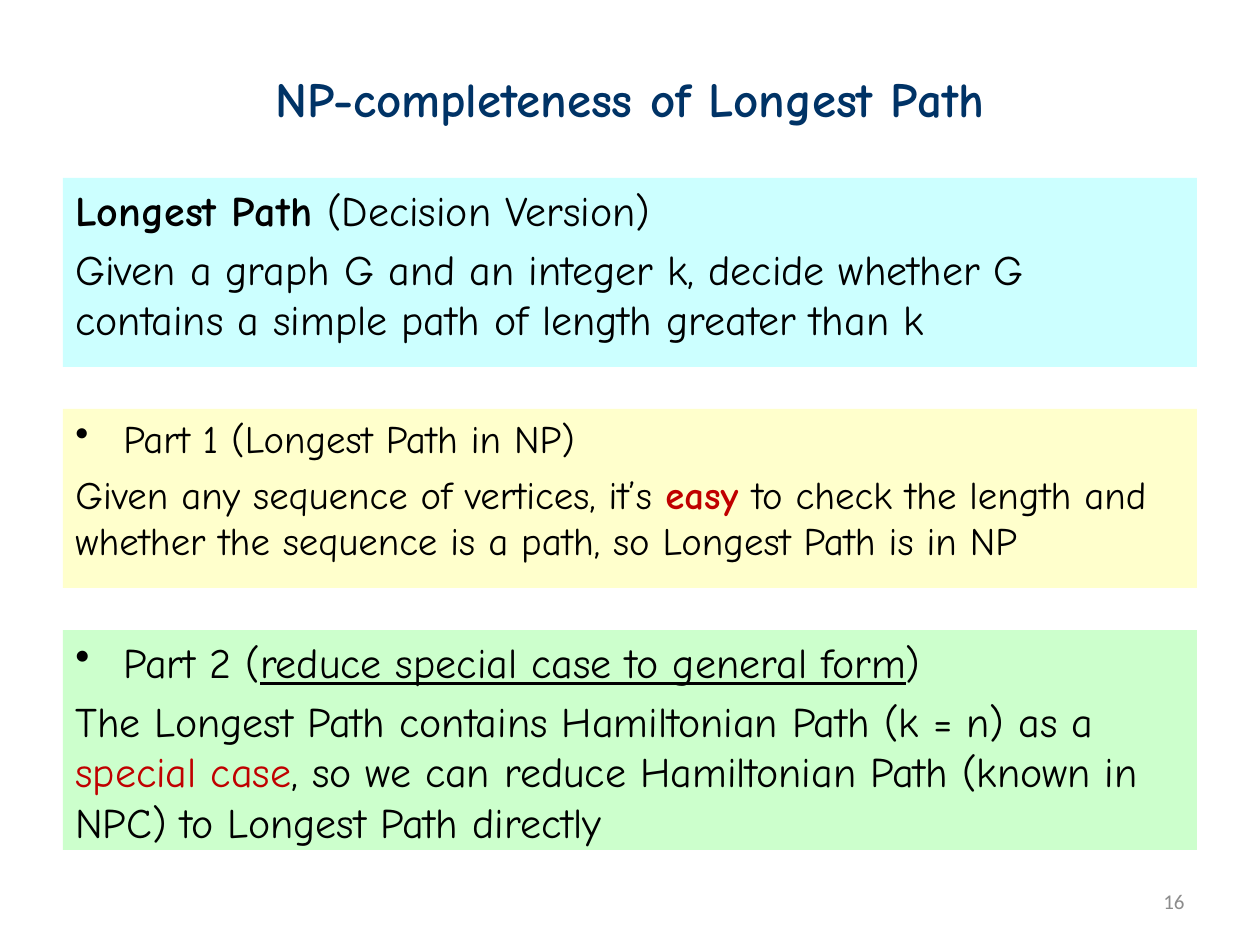
import pptx
import pptx.util
import pptx.dml.color
import pptx.enum.shapes
import pptx.enum.text
import pptx.oxml
import pptx.oxml.ns

FONT = "Comic Neue"
NAVY, BLACK, RED, GRAY = "003366", "000000", "C00000", "8C8C8C"
LEFT, WIDTH, INDENT = 63, 1134, 48

TITLE = "NP-completeness of Longest Path"
PAGE_NUMBER = "16"
PANELS = [
    dict(top=178, height=189, fill="CCFFFF", size=24, paragraphs=[
        (False, [("Longest Path ", dict(bold=True)), ("(Decision Version)", {})]),
        (False, [("Given a graph G and an integer k, decide whether G contains "
                  "a simple path of length greater than k", {})]),
    ]),
    dict(top=409, height=179, fill="FFFFCC", size=22.2, paragraphs=[
        (True, [("Part 1 (Longest Path in NP)", {})]),
        (False, [("Given any sequence of vertices, it’s ", {}),
                 ("easy ", dict(color=RED, bold=True)),
                 ("to check the length and whether the sequence is a path, "
                  "so Longest Path is in NP", {})]),
    ]),
    dict(top=630, height=220, fill="CCFFCC", size=24, paragraphs=[
        (True, [("Part 2 (", {}),
                ("reduce special case to general form", dict(underline=True)),
                (")", {})]),
        (False, [("The Longest Path contains Hamiltonian Path (k = n) as a ", {}),
                 ("special case", dict(color=RED)),
                 (", so we can reduce Hamiltonian Path (known in NPC) "
                  "to Longest Path directly", {})]),
    ]),
]


def px(n):
    return pptx.util.Emu(round(n * 914400 / 126))


def rgb(value):
    return pptx.dml.color.RGBColor.from_string(value)


def add_run(p, text, size=24, color=BLACK, bold=False, underline=False, font=FONT):
    r = p.add_run()
    r.text = text
    r.font.name = font
    r.font.size = pptx.util.Pt(size)
    r.font.bold = bold
    r.font.underline = underline
    r.font.color.rgb = rgb(color)


def add_bullet(p):
    pPr = p._p.get_or_add_pPr()
    pPr.set("marL", str(px(INDENT)))
    pPr.set("indent", str(-px(INDENT)))
    pPr.append(pptx.oxml.parse_xml(
        f'<a:buChar {pptx.oxml.ns.nsdecls("a")} char="•"/>'))


def add_line(s, box, text, align, **style):
    tf = s.shapes.add_textbox(*map(px, box)).text_frame
    tf.word_wrap = True
    tf.vertical_anchor = pptx.enum.text.MSO_ANCHOR.MIDDLE
    p = tf.paragraphs[0]
    p.alignment = align
    add_run(p, text, **style)


def add_panel(s, top, height, fill, size, paragraphs):
    sp = s.shapes.add_shape(pptx.enum.shapes.MSO_SHAPE.RECTANGLE,
                            px(LEFT), px(top), px(WIDTH), px(height))
    sp.shadow.inherit = False
    sp.fill.solid()
    sp.fill.fore_color.rgb = rgb(fill)
    sp.line.fill.background()
    tf = sp.text_frame
    tf.word_wrap = True
    tf.vertical_anchor = pptx.enum.text.MSO_ANCHOR.TOP
    for i, (bulleted, runs) in enumerate(paragraphs):
        p = tf.add_paragraph() if i else tf.paragraphs[0]
        p.alignment = pptx.enum.text.PP_ALIGN.LEFT
        p.space_before = pptx.util.Pt(5)
        if bulleted:
            add_bullet(p)
        for text, style in runs:
            add_run(p, text, size=size, **style)


def main():
    prs = pptx.Presentation()
    prs.slide_width, prs.slide_height = px(1260), px(945)
    s = prs.slides.add_slide(prs.slide_layouts[6])
    add_line(s, (LEFT, 38, WIDTH, 120), TITLE, pptx.enum.text.PP_ALIGN.CENTER,
             size=28, color=NAVY, bold=True)
    for panel in PANELS:
        add_panel(s, **panel)
    add_line(s, (903, 876, 294, 50), PAGE_NUMBER, pptx.enum.text.PP_ALIGN.RIGHT,
             size=12, color=GRAY, font="Calibri")
    prs.save("out.pptx")


if __name__ == "__main__":
    main()
